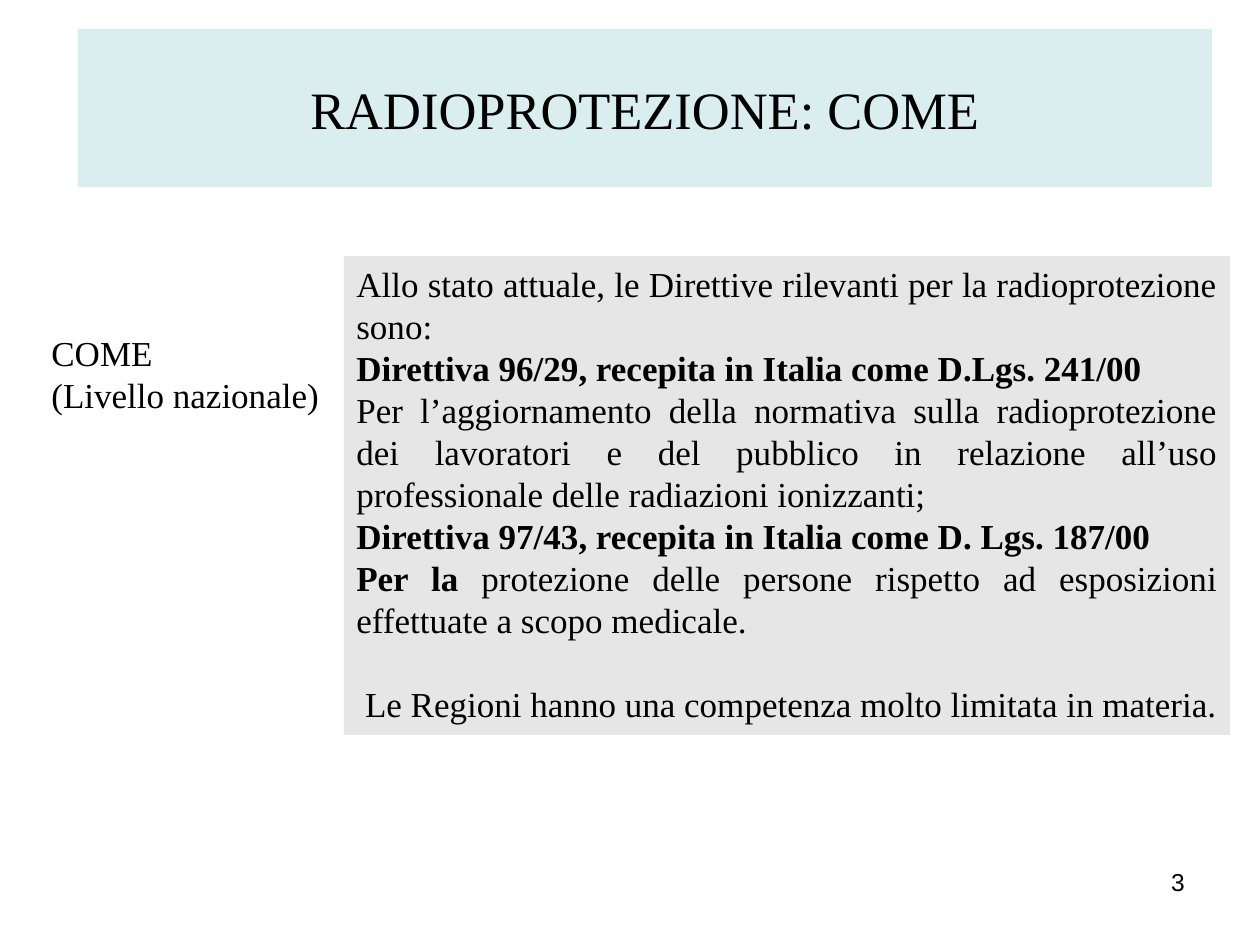
from dataclasses import dataclass

from pptx import Presentation
from pptx import util as u
from pptx.dml.color import RGBColor
from pptx.enum import shapes, text

PX = u.Inches(1) // 126


@dataclass(frozen=True)
class Theme:
    ink: str = "000000"
    banner: str = "DAEDEF"
    panel: str = "E6E6E6"
    serif: str = "Times New Roman"
    sans: str = "Arial"
    title: int = 30
    body: int = 20
    number: int = 14
    leading: int = 24


class Page:
    def __init__(self, deck, theme):
        self.theme = theme
        self.page = deck.slides.add_slide(deck.slide_layouts[6])

    def fill_text(self, box, paragraphs, size, font, align, leading=None):
        frame = box.text_frame
        frame.word_wrap = True
        for index, spans in enumerate(paragraphs):
            para = frame.add_paragraph() if index else frame.paragraphs[0]
            para.alignment = align
            para.font.size = u.Pt(size)
            para.font.name = font
            para.font.color.rgb = RGBColor.from_string(self.theme.ink)
            if leading:
                para.line_spacing = u.Pt(leading)
            for words, bold in spans:
                span = para.add_run()
                span.text = words
                span.font.bold = bold
        return frame

    def label(self, place, lines, size, font, align, leading=None):
        box = self.page.shapes.add_textbox(*(PX * n for n in place))
        self.fill_text(box, [[(line, False)] for line in lines],
                       size, font, align, leading)

    def panel(self, place, fill, paragraphs, size, align, anchor, leading=None):
        box = self.page.shapes.add_shape(
            shapes.MSO_SHAPE.RECTANGLE, *(PX * n for n in place))
        box.shadow.inherit = False
        box.fill.solid()
        box.fill.fore_color.rgb = RGBColor.from_string(fill)
        box.line.fill.background()
        frame = self.fill_text(box, paragraphs, size, self.theme.serif, align, leading)
        frame.vertical_anchor = anchor
        return frame


def main():
    deck = Presentation()
    deck.slide_width, deck.slide_height = PX * 1260, PX * 945
    theme = Theme()
    page = Page(deck, theme)
    align, anchor = text.PP_ALIGN, text.MSO_ANCHOR

    page.label((903, 861, 294, 66), ["3"], theme.number, theme.sans, align.RIGHT)
    page.panel((78, 29, 1134, 158), theme.banner,
               [[("RADIOPROTEZIONE: COME", False)]],
               theme.title, align.CENTER, anchor.MIDDLE)
    page.label((39, 325, 305, 97), ["COME", "(Livello nazionale)"],
               theme.body, theme.serif, align.LEFT, theme.leading)

    directives = [
        [("Allo stato attuale, le Direttive rilevanti per la radioprotezione sono:", False)],
        [("Direttiva 96/29, recepita in Italia come D.Lgs. 241/00", True)],
        [("Per l’aggiornamento della normativa sulla radioprotezione dei lavoratori "
          "e del pubblico in relazione all’uso professionale delle radiazioni "
          "ionizzanti;", False)],
        [("Direttiva 97/43, recepita in Italia come D. Lgs. 187/00", True)],
        [("Per la ", True),
         ("protezione delle persone rispetto ad esposizioni effettuate a scopo "
          "medicale.", False)],
        [(" Le Regioni hanno una competenza molto limitata in materia.", False)],
    ]
    frame = page.panel((344, 256, 886, 479), theme.panel, directives,
                       theme.body, align.JUSTIFY, anchor.TOP, theme.leading)
    frame.paragraphs[-1].space_before = u.Pt(theme.leading)

    deck.save("out.pptx")


if __name__ == "__main__":
    main()
